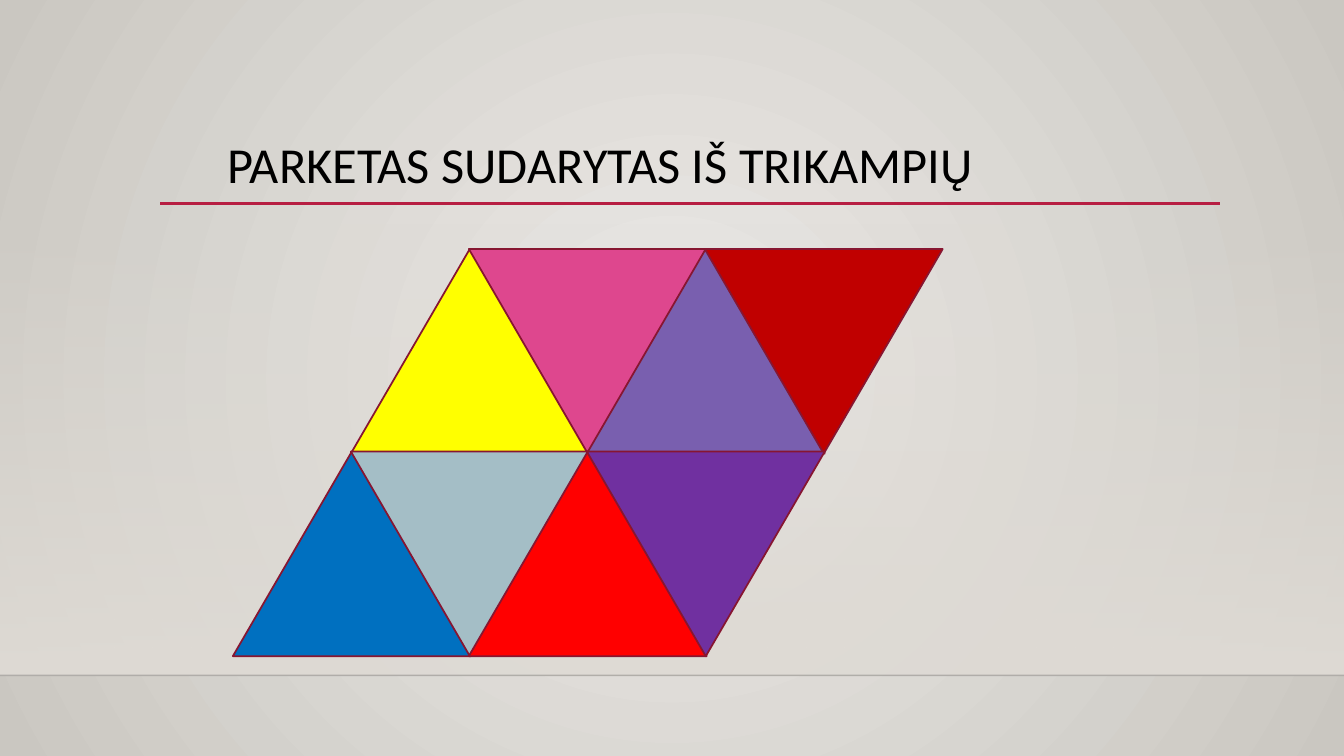
from lxml import etree
from pptx import Presentation
from pptx.dml.color import RGBColor
from pptx.enum import shapes, text
from pptx.oxml import ns
from pptx.util import Inches, Pt

BACKDROP_CENTER = RGBColor(0xEC, 0xEA, 0xE7)
BACKDROP_EDGE = RGBColor(0xCA, 0xC7, 0xC1)
WALL = RGBColor(0xDF, 0xDB, 0xD5)
FLOOR_LINE = RGBColor(0x00, 0x00, 0x01)
ACCENT = RGBColor(0xB7, 0x1E, 0x42)
BLACK = RGBColor(0x00, 0x00, 0x00)
TILE_EDGE = RGBColor(0x87, 0x16, 0x31)
YELLOW = RGBColor(0xFF, 0xFF, 0x00)
PINK = RGBColor(0xDE, 0x47, 0x8E)
LAVENDER = RGBColor(0x79, 0x5F, 0xAF)
DARK_RED = RGBColor(0xC0, 0x00, 0x00)
BLUE = RGBColor(0x00, 0x70, 0xC0)
GREY_BLUE = RGBColor(0xA4, 0xBE, 0xC6)
RED = RGBColor(0xFF, 0x00, 0x00)
PURPLE = RGBColor(0x70, 0x30, 0xA0)

TILE_ROWS = [
    [YELLOW, PINK, LAVENDER, DARK_RED],
    [BLUE, GREY_BLUE, RED, PURPLE],
]


def set_gradient(fill, start, end):
    fill.gradient()
    for stop, color in zip(fill.gradient_stops, (start, end)):
        stop.color.rgb = color


def set_opacity(element, percent):
    color = next(element.iter(ns.qn("a:srgbClr")))
    etree.SubElement(color, ns.qn("a:alpha"), val=str(percent * 1000))


def add_line(slide, left, top, width, color, weight):
    line = slide.shapes.add_connector(
        shapes.MSO_CONNECTOR.STRAIGHT,
        Inches(left), Inches(top), Inches(left + width), Inches(top))
    line.line.color.rgb = color
    line.line.width = Pt(weight)
    etree.SubElement(line._element.spPr, ns.qn("a:effectLst"))
    return line


def add_backdrop(slide, width, wall_top, wall_height):
    set_gradient(slide.background.fill, BACKDROP_CENTER, BACKDROP_EDGE)
    linear = next(slide._element.iter(ns.qn("a:lin")))
    circle = etree.Element(ns.qn("a:path"), {"path": "circle"})
    sides = dict.fromkeys("ltrb", "50000")
    etree.SubElement(circle, ns.qn("a:fillToRect"), sides)
    linear.getparent().replace(linear, circle)

    wall = slide.shapes.add_shape(
        shapes.MSO_SHAPE.RECTANGLE,
        0, Inches(wall_top), Inches(width), Inches(wall_height))
    wall.shadow.inherit = False
    wall.line.fill.background()
    set_gradient(wall.fill, WALL, WALL)
    wall.fill.gradient_angle = 270
    set_opacity(wall._element, 0)

    floor = add_line(slide, 0, wall_top + wall_height, width, FLOOR_LINE, 1)
    set_opacity(floor._element, 20)


def add_title(slide, left, top, width, height):
    add_line(slide, 1.59, 2.02, 10.51, ACCENT, 2.5)
    title = slide.shapes.add_textbox(
        Inches(left), Inches(top), Inches(width), Inches(height))
    frame = title.text_frame
    frame.word_wrap = True
    frame.vertical_anchor = text.MSO_ANCHOR.TOP
    paragraph = frame.paragraphs[0]
    paragraph.text = "PARKETAS SUDARYTAS IŠ TRIKAMPIŲ"
    paragraph.line_spacing = 0.9
    paragraph.font.name = "Calibri"
    paragraph.font.size = Pt(36)
    paragraph.font.color.rgb = BLACK


def add_parquet(slide, left, top, tile_width, tile_height):
    column_step = 1.17
    row_step = 2.01
    group = slide.shapes.add_group_shape()
    for row, colors in enumerate(TILE_ROWS):
        row_left = left + (len(TILE_ROWS) - 1 - row) * column_step
        for column, color in enumerate(colors):
            tile = group.shapes.add_shape(
                shapes.MSO_SHAPE.ISOSCELES_TRIANGLE,
                Inches(row_left + column * column_step),
                Inches(top + row * row_step),
                Inches(tile_width), Inches(tile_height))
            tile.rotation = 180 * (column % 2)
            tile.shadow.inherit = False
            tile.fill.solid()
            tile.fill.fore_color.rgb = color
            tile.line.color.rgb = TILE_EDGE
            tile.line.width = Pt(1.25)


def main():
    presentation = Presentation()
    presentation.slide_width = Inches(13.33)
    presentation.slide_height = Inches(7.5)
    slide = presentation.slides.add_slide(presentation.slide_layouts[6])
    add_backdrop(slide, 13.33, 2.21, 4.49)
    add_title(slide, 2.16, 1.34, 10.5, 1.16)
    add_parquet(slide, 2.31, 2.47, 2.36, 2.03)
    presentation.save("out.pptx")


if __name__ == "__main__":
    main()
